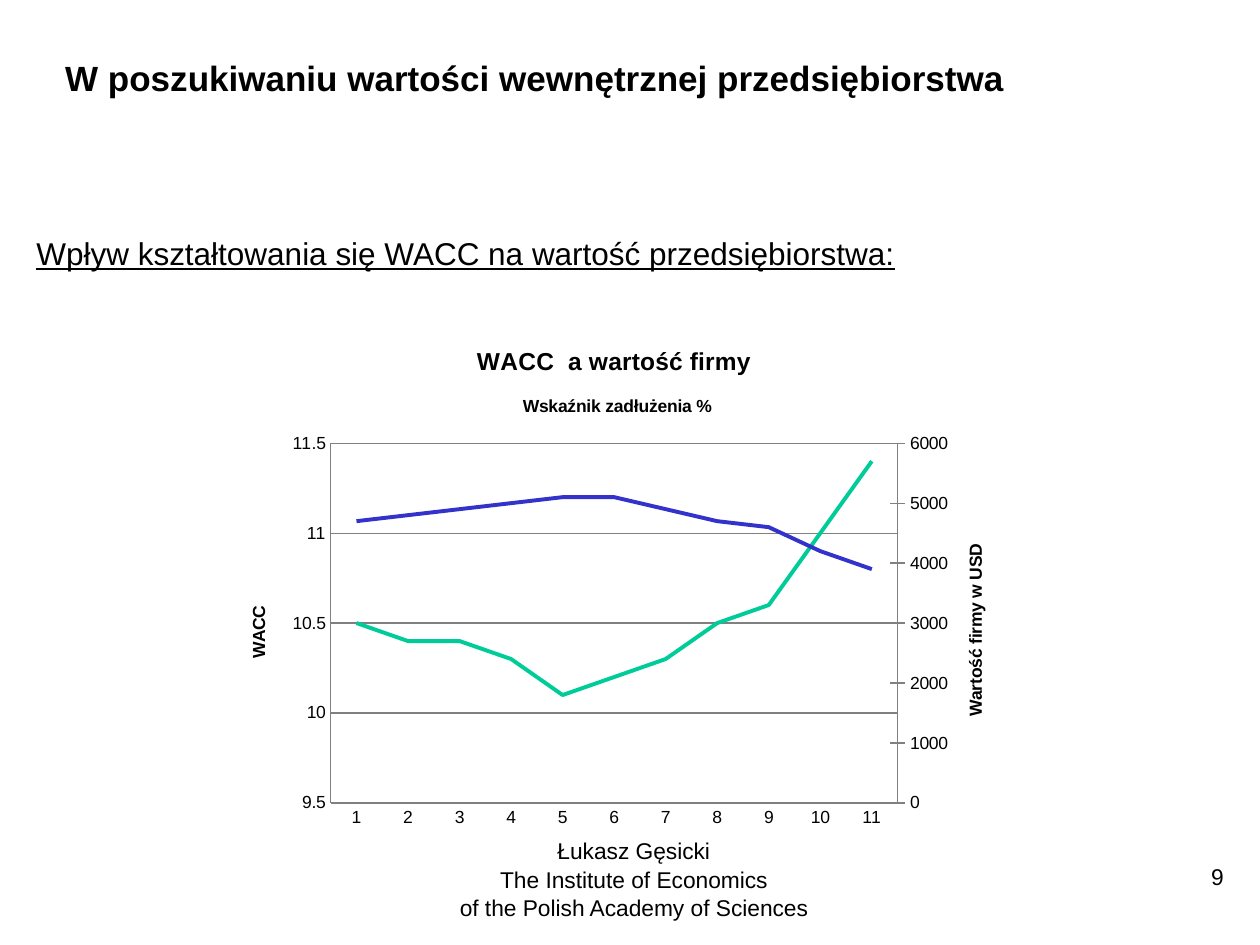
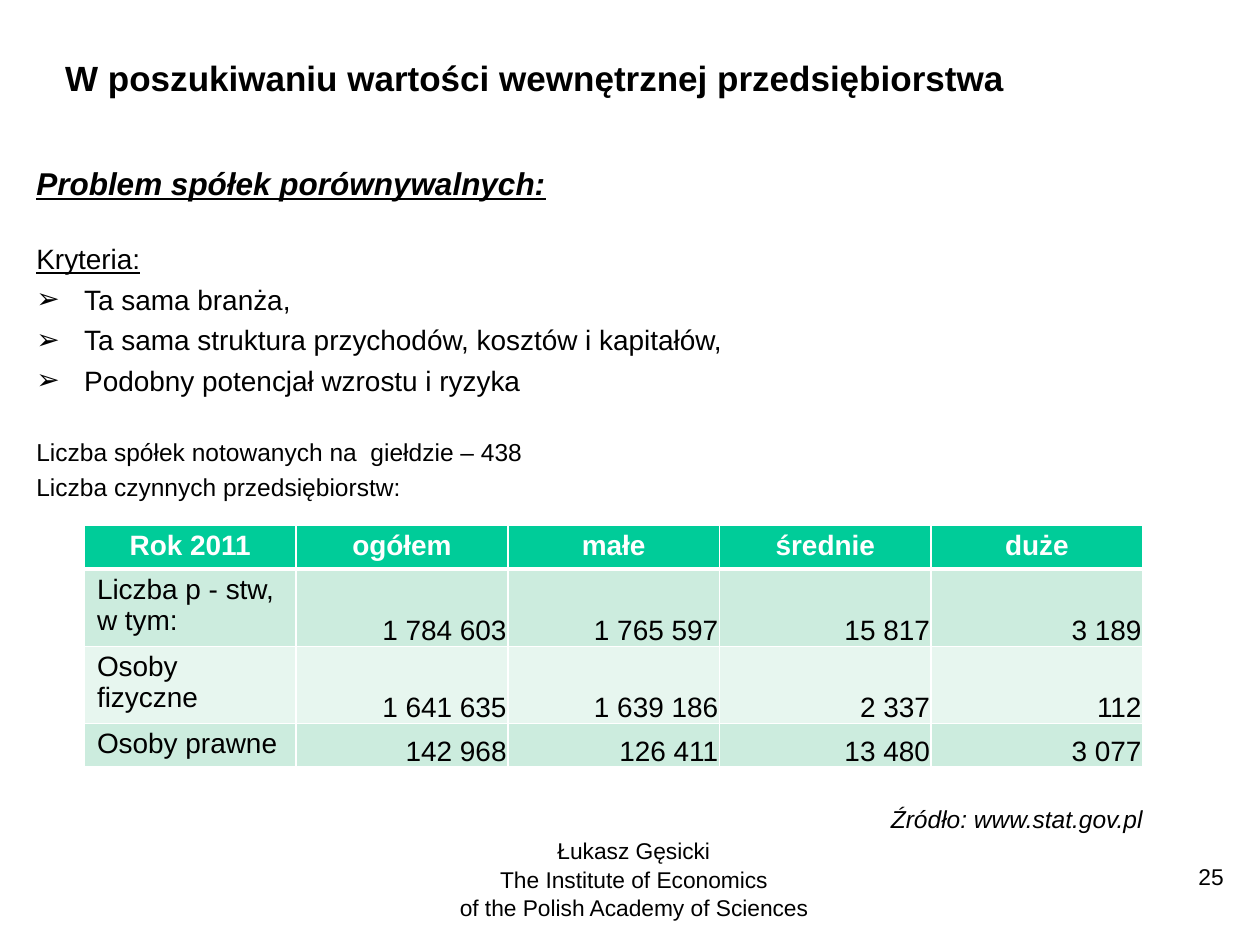
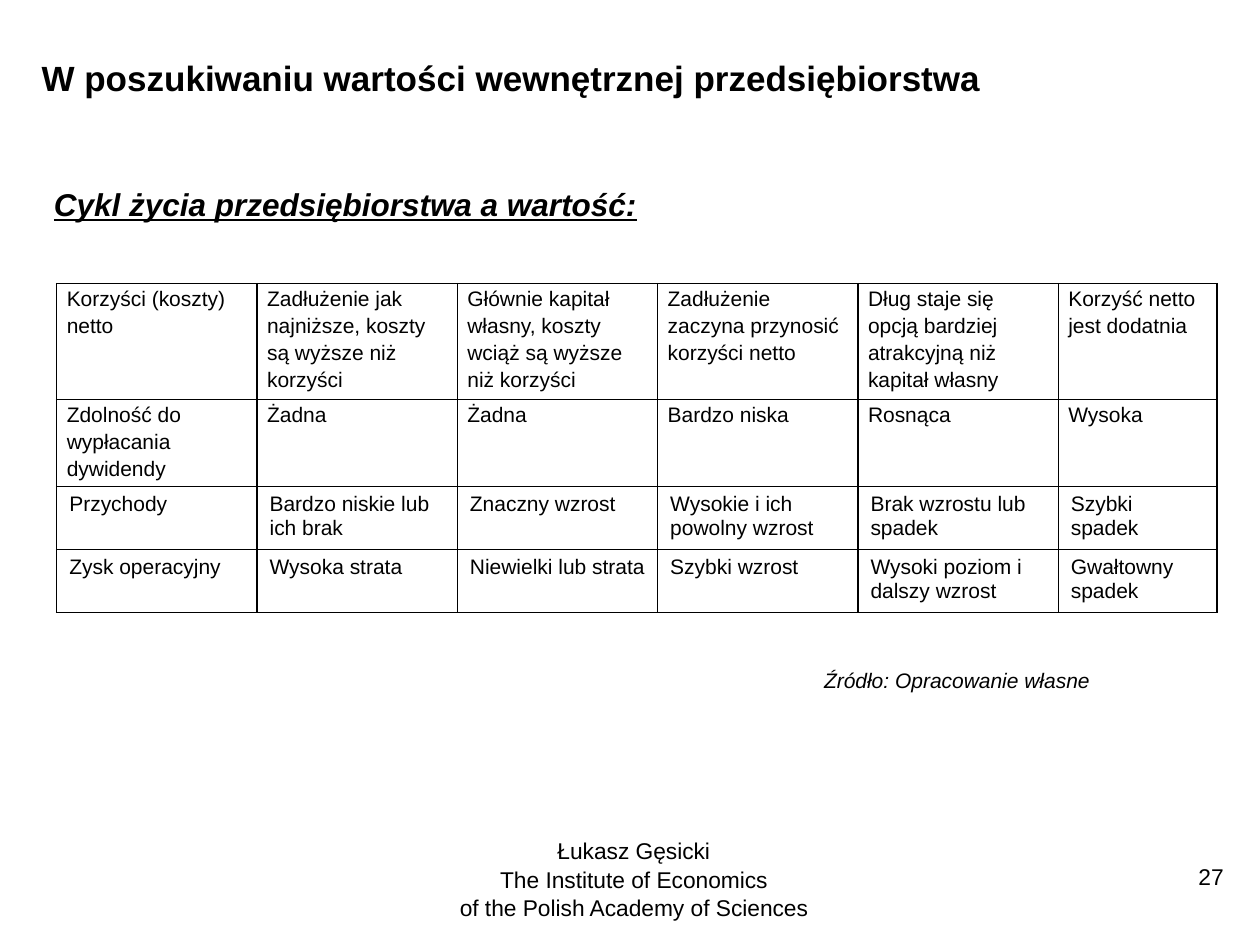
import copy
from lxml import etree
from pptx import Presentation
from pptx.chart import axis, data
from pptx.dml.color import RGBColor
from pptx.enum import chart as ce, text as te
from pptx.oxml.ns import qn
from pptx.util import Inches, Pt

# Shared look
FACE, BLACK, WHITE = "Arial", "000000", "FFFFFF"
GREEN, BLUE, GREY = "00CC99", "3333CC", "808080"
MINT, PALE = "CCECDE", "E7F6EF"
LEFT, MID, RIGHT = te.PP_ALIGN.LEFT, te.PP_ALIGN.CENTER, te.PP_ALIGN.RIGHT
HEAD = "W poszukiwaniu wartości wewnętrznej przedsiębiorstwa"
FOOT = ["Łukasz Gęsicki", "The Institute of Economics",
        "of the Polish Academy of Sciences"]
rgb = RGBColor.from_string


def put(para, words, size, align=None, color=BLACK, **looks):
    """Write one paragraph and set its font, end mark included."""
    para.text = words
    para.alignment = align
    font = para.font
    font.name, font.size = FACE, Pt(size)
    font.color.rgb = rgb(color)
    for key, value in looks.items():
        setattr(font, key, value)
    etree.SubElement(para._p, qn("a:endParaRPr"), sz=str(size * 100))


def box(page, at, lines, size, align=LEFT, **looks):
    """Add a text box with one paragraph per line."""
    frame = page.shapes.add_textbox(*map(Inches, at)).text_frame
    frame.word_wrap = True
    for i, line in enumerate(lines):
        para = frame.add_paragraph() if i else frame.paragraphs[0]
        put(para, line, size, align, **looks)
    return frame


deck = Presentation()
deck.slide_width, deck.slide_height = Inches(10), Inches(7.5)

# Title, footer and number on every slide
pages = []
for num, side in (("9", MID), ("25", MID), ("27", LEFT)):
    page = deck.slides.add_slide(deck.slide_layouts[5])
    title = page.shapes.title
    title.left, title.top = Inches(0.23), Inches(0.15)
    title.width, title.height = Inches(8.03), Inches(0.93)
    frame = title.text_frame
    frame.auto_size = te.MSO_AUTO_SIZE.NONE
    frame.vertical_anchor = te.MSO_ANCHOR.MIDDLE
    put(frame.paragraphs[0], HEAD, 20, side, bold=True)
    foot = box(page, (3.45, 6.58, 3.16, 0.75), FOOT, 13, MID)
    for para in foot.paragraphs:
        para.line_spacing = 1.05
    box(page, (7.73, 6.8, 2.08, 0.5), [num], 13, RIGHT)
    pages.append(page)
debt, peers, cycle = pages

# Slide 1: WACC against firm value
box(debt, (0.19, 1.81, 9.61, 0.5),
    ["Wpływ kształtowania się WACC na wartość przedsiębiorstwa:"], 18,
    underline=True)
feed = data.CategoryChartData()
feed.categories = [str(n) for n in range(1, 12)]
feed.add_series("Series 1", [10.5, 10.4, 10.4, 10.3, 10.1, 10.2, 10.3,
                             10.5, 10.6, 11, 11.4])
feed.add_series("Series 2", [4700, 4800, 4900, 5000, 5100, 5100, 4900,
                             4700, 4600, 4200, 3900])
chart = debt.shapes.add_chart(
    ce.XL_CHART_TYPE.LINE, Inches(1.75), Inches(2.58), Inches(6.25),
    Inches(4.08), feed).chart
chart.has_legend = False
chart.font.name, chart.font.size = FACE, Pt(10)
chart.font.color.rgb = rgb(BLACK)
for ser, color in zip(chart.plots[0].series, (GREEN, BLUE)):
    ser.smooth = False
    ser.format.line.color.rgb = rgb(color)
    ser.format.line.width = Pt(2.25)

# Second line plot with its own pair of axes
cats, vals = chart.category_axis, chart.value_axis
area = chart._chartSpace.find(".//" + qn("c:plotArea"))
line = area.find(qn("c:lineChart"))
twins = [copy.deepcopy(e) for e in (line, vals._element, cats._element)]
for twin in twins:
    for node in twin.iter(qn("c:axId"), qn("c:crossAx")):
        node.set("val", node.get("val")[:-1])
plot, rise, base = twins
line.remove(line.findall(qn("c:ser"))[1])
plot.remove(plot.find(qn("c:ser")))
line.addnext(plot)
cats._element.getparent().extend([rise, base])
right = axis.ValueAxis(rise)
rise.find(qn("c:axPos")).set("val", "r")
rise.find(qn("c:crosses")).set("val", "max")
base.find(qn("c:delete")).set("val", "1")

# Scales, ticks and grid
NONE, CROSS = ce.XL_TICK_MARK.NONE, ce.XL_TICK_MARK.CROSS
for ax, low, high, step in ((vals, 9.5, 11.5, 0.5), (right, 0, 6000, 1000)):
    ax.minimum_scale, ax.maximum_scale, ax.major_unit = low, high, step
    ax.tick_labels.number_format = "General"
    ax.tick_labels.number_format_is_linked = False
for ax, tick in ((cats, NONE), (vals, NONE), (right, CROSS)):
    ax.major_tick_mark, ax.minor_tick_mark = tick, NONE
    ax.format.line.color.rgb = rgb(GREY)
right.has_major_gridlines = False
vals.has_major_gridlines = True
vals.major_gridlines.format.line.color.rgb = rgb(GREY)

# Chart titles and places, as shares of the chart
chart.has_title = True
spots = [(area, (0.14, 0.23, 0.72, 0.7))]
for name, words, size, spot in (
        (chart.chart_title, "WACC  a wartość firmy", 14, (0.32, 0.03)),
        (cats.axis_title, "Wskaźnik zadłużenia %", 10, (0.38, 0.13)),
        (vals.axis_title, "WACC", 10, (0.03, 0.54)),
        (right.axis_title, "Wartość firmy w USD", 10, (0.94, 0.42))):
    frame = name.text_frame
    put(frame.paragraphs[0], words, size, bold=True)
    if spot[1] > 0.2:
        frame._txBody.bodyPr.set("rot", "-5400000")
    spots.append((name._element, spot))
for node, spot in spots:
    for old in node.findall(qn("c:layout")):
        node.remove(old)
    plan = etree.Element(qn("c:layout"))
    hand = etree.SubElement(plan, qn("c:manualLayout"))
    if node is area:
        etree.SubElement(hand, qn("c:layoutTarget"), val="inner")
    for key in ("xMode", "yMode"):
        etree.SubElement(hand, qn("c:" + key), val="edge")
    for key, share in zip("xywh", spot):
        etree.SubElement(hand, qn("c:" + key), val=str(share))
    node.insert(0 if node is area else 1, plan)

# Slide 2: criteria
frame = box(peers, (0.19, 1.25, 9.61, 2.8),
            ["Problem spółek porównywalnych:"], 18,
            bold=True, italic=True, underline=True)
for words, size, gap, mark in (
        ("Kryteria:", 16, 23, False),
        ("Ta sama branża,", 16, 4, True),
        ("Ta sama struktura przychodów, kosztów i kapitałów,", 16, 4, True),
        ("Podobny potencjał wzrostu i ryzyka", 16, 4, True),
        ("Liczba spółek notowanych na  giełdzie – 438", 14, 23, False),
        ("Liczba czynnych przedsiębiorstw:", 14, 3, False)):
    para = frame.add_paragraph()
    para.space_before = Pt(gap)
    if mark:
        props = para._p.get_or_add_pPr()
        props.set("marL", str(Inches(0.38)))
        props.set("indent", str(-Inches(0.38)))
        etree.SubElement(props, qn("a:buFont"), typeface=FACE)
        etree.SubElement(props, qn("a:buChar"), char="➢")
    put(para, words, size, LEFT, underline=words == "Kryteria:")
box(peers, (5.17, 6.33, 4, 0.34), ["Źródło: www.stat.gov.pl"], 14, RIGHT,
    italic=True)

# Slide 3: life cycle
box(cycle, (0.33, 1.42, 7.33, 0.4),
    ["Cykl życia przedsiębiorstwa a wartość:"], 18,
    bold=True, italic=True, underline=True)
box(cycle, (4.33, 5.25, 4.42, 0.3), ["Źródło: Opracowanie własne"], 12,
    RIGHT, italic=True)

# Tables of slides 2 and 3
firms = [
    ["Rok 2011", "ogółem", "małe", "średnie", "duże"],
    ["Liczba p - stw, w tym:", "1 784 603", "1 765 597", "15 817", "3 189"],
    ["Osoby fizyczne", "1 641 635", "1 639 186", "2 337", "112"],
    ["Osoby prawne", "142 968", "126 411", "13 480", "3 077"]]
stages = [
    ["Korzyści (koszty) netto",
     "Zadłużenie jak najniższe, koszty są wyższe niż korzyści",
     "Głównie kapitał własny, koszty wciąż są wyższe niż korzyści",
     "Zadłużenie zaczyna przynosić korzyści netto",
     "Dług staje się opcją bardziej atrakcyjną niż kapitał własny",
     "Korzyść netto jest dodatnia"],
    ["Zdolność do wypłacania dywidendy", "Żadna", "Żadna", "Bardzo niska",
     "Rosnąca", "Wysoka"],
    ["Przychody", "Bardzo niskie lub ich brak", "Znaczny wzrost",
     "Wysokie i ich powolny wzrost", "Brak wzrostu lub spadek",
     "Szybki spadek"],
    ["Zysk operacyjny", "Wysoka strata", "Niewielki lub strata",
     "Szybki wzrost", "Wysoki poziom i dalszy wzrost",
     "Gwałtowny spadek"]]
for page, rows, at, wide, high, edge in (
        (peers, firms, (0.67, 4.17), [1.68] * 5,
         [0.34, 0.59, 0.59, 0.34], WHITE),
        (cycle, stages, (0.45, 2.25), [1.59] * 5 + [1.26],
         [0.86, 0.65, 0.47, 0.47], BLACK)):
    size = (*at, sum(wide), sum(high))
    grid = page.shapes.add_table(len(rows), len(wide),
                                 *map(Inches, size)).table
    grid.first_row = grid.horz_banding = False
    for col, width in zip(grid.columns, wide):
        col.width = Inches(width)
    for r, row in enumerate(rows):
        grid.rows[r].height = Inches(high[r])
        for c, words in enumerate(row):
            cell = grid.cell(r, c)
            para = cell.text_frame.paragraphs[0]
            if page is peers:
                cell.fill.solid()
                shade = (GREEN, MINT, PALE, MINT)[r]
                cell.fill.fore_color.rgb = rgb(shade)
                side = MID if r == 0 else RIGHT if c else LEFT
                put(para, words, 16, side, BLACK if r else WHITE,
                    bold=r == 0)
                cell.margin_top = cell.margin_bottom = Inches(0.04)
                if r and c:
                    cell.vertical_anchor = te.MSO_ANCHOR.BOTTOM
                    cell.margin_left = cell.margin_right = Inches(0.01)
                    cell.margin_top, cell.margin_bottom = Inches(0.01), 0
            else:
                cell.fill.background()
                put(para, words, 12, LEFT, bold=False)
                if r < 2:
                    para.line_spacing = 1.15
                    cell.margin_left = cell.margin_right = Inches(0.08)
                    cell.margin_top = cell.margin_bottom = 0
            # Borders, thicker below the filled header
            props = cell._tc.get_or_add_tcPr()
            for i, name in enumerate(("lnL", "lnR", "lnT", "lnB")):
                thick = page is peers and (r, name) in ((0, "lnB"), (1, "lnT"))
                rule = etree.Element(qn("a:" + name),
                                     w=str(Pt(3 if thick else 1)))
                fill = etree.SubElement(rule, qn("a:solidFill"))
                etree.SubElement(fill, qn("a:srgbClr"), val=edge)
                props.insert(i, rule)

deck.save("out.pptx")
